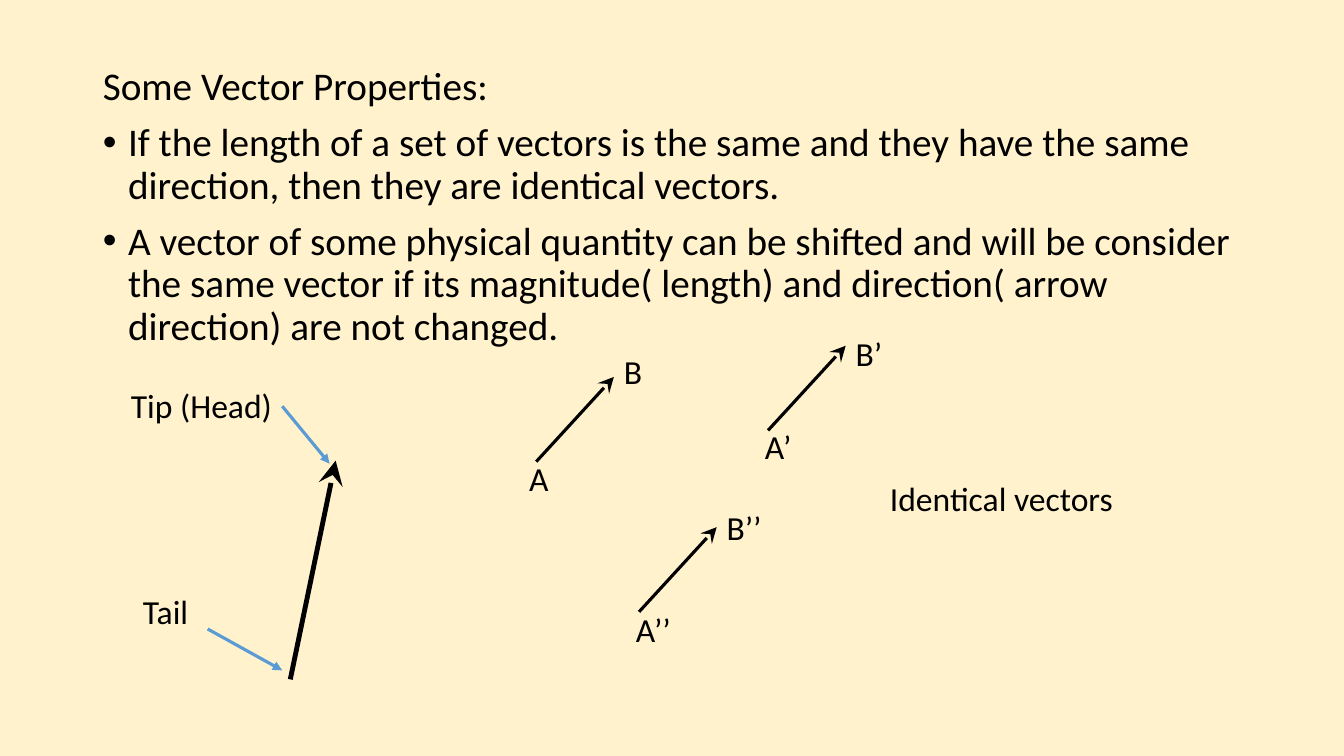
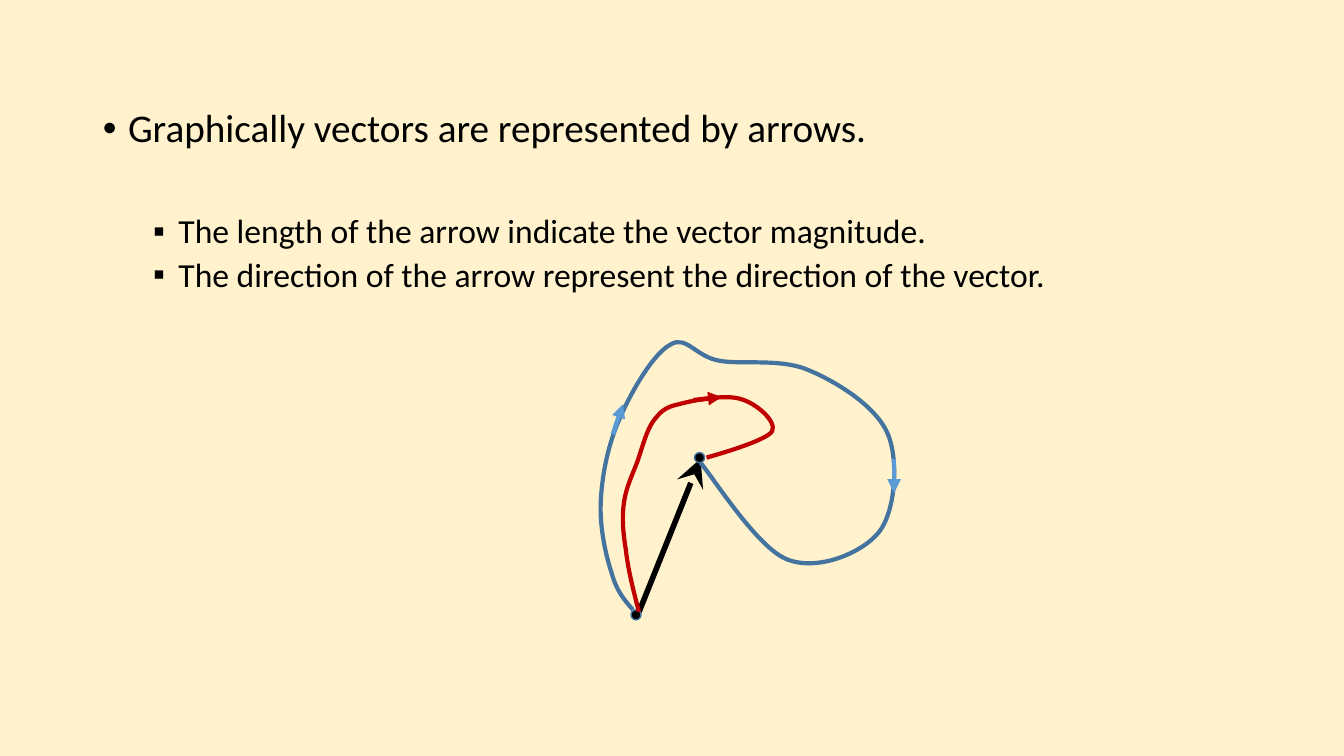
import pptx
import pptx.util
import pptx.dml.color
import pptx.enum.shapes
import pptx.enum.text
import pptx.oxml.ns
import lxml.etree

Inches = pptx.util.Inches
Pt = pptx.util.Pt
RGBColor = pptx.dml.color.RGBColor
qn = pptx.oxml.ns.qn

CREAM = RGBColor(0xFF, 0xF2, 0xCC)
BLACK = RGBColor(0x00, 0x00, 0x00)
SKY = RGBColor(0x5B, 0x9B, 0xD5)
STEEL = RGBColor(0x43, 0x73, 0x9E)
RED = RGBColor(0xC0, 0x00, 0x00)

BODY_FONT = {"name": "Calibri", "size": Pt(28)}
SMALL_FONT = {"name": "Calibri", "size": Pt(24)}
FRAME = {"word_wrap": True, "auto_size": pptx.enum.text.MSO_AUTO_SIZE.NONE,
         "vertical_anchor": pptx.enum.text.MSO_ANCHOR.TOP}

# Arrowheads: vectors have a large one, pointers a medium one
VECTOR_HEAD = {"type": "stealth", "w": "lg", "len": "lg"}
POINTER_HEAD = {"type": "triangle", "w": "med", "len": "med"}

# Paragraph styles: level, bullet, left margin, hanging indent, space before, font
STYLES = {
    "plain": (0, None, 0, 0, 10, BODY_FONT),
    "bullet": (0, "•", 0.25, -0.25, 10, BODY_FONT),
    "first square": (1, "▪", 0.75, -0.25, 45.5, SMALL_FONT),
    "square": (1, "▪", 0.75, -0.25, 5, SMALL_FONT),
}


def add_arrow(page, start, end, color, width, head):
    ends = [Inches(value) for value in (*start, *end)]
    arrow = page.shapes.add_connector(pptx.enum.shapes.MSO_CONNECTOR.STRAIGHT, *ends)
    arrow.line.color.rgb = color
    arrow.line.width = Pt(width)
    lxml.etree.SubElement(arrow.get_or_add_ln(), qn("a:tailEnd"), head)
    lxml.etree.SubElement(arrow.element.spPr, qn("a:effectLst"))


def add_curve(page, points, color):
    """Draw joined cubic curves: a start point, then three points per curve."""
    track = [(Inches(x), Inches(y)) for x, y in points]
    builder = page.shapes.build_freeform(*track[0])
    builder.add_line_segments(track[1:], close=False)
    curve = builder.convert_to_shape()
    curve.shadow.inherit = False
    curve.fill.background()
    curve.line.color.rgb = color
    curve.line.width = Pt(3)
    # Join every three straight segments into one cubic curve
    segments = list(curve.element.iter(qn("a:lnTo")))
    for first in range(0, len(segments), 3):
        lead, *others = segments[first:first + 3]
        cubic = lxml.etree.Element(qn("a:cubicBezTo"))
        lead.addprevious(cubic)
        for segment in (lead, *others):
            cubic.append(segment[0])
            segment.getparent().remove(segment)


deck = pptx.Presentation()
deck.slide_width = Inches(40 / 3)
deck.slide_height = Inches(7.5)
background = deck.slide_master.background.fill
background.solid()
background.fore_color.rgb = CREAM

# Both pages: body text
bodies = [
    (0.61, 6.47, [
        ("plain", "Some Vector Properties:"),
        ("bullet", "If the length of a set of vectors is the same and they have the same "
                   "direction, then they are identical vectors."),
        ("bullet", "A vector of some physical quantity can be shifted and will be consider "
                   "the same vector if its magnitude( length) and direction( arrow "
                   "direction) are not changed."),
    ]),
    (1.03, 5.73, [
        ("bullet", "Graphically vectors are represented by arrows."),
        ("first square", "The length of the arrow indicate the vector magnitude."),
        ("square", "The direction of the arrow represent the direction of the vector."),
    ]),
]
for top, height, lines in bodies:
    page = deck.slides.add_slide(deck.slide_layouts[1])
    title = page.shapes.title.element
    title.getparent().remove(title)
    body = page.placeholders[1]
    body.left, body.top = Inches(0.92), Inches(top)
    body.width, body.height = Inches(11.5), Inches(height)
    frame = body.text_frame
    for key, value in FRAME.items():
        setattr(frame, key, value)
    for number, (style, text) in enumerate(lines):
        level, bullet, margin, indent, before, font = STYLES[style]
        para = frame.paragraphs[0] if number == 0 else frame.add_paragraph()
        para.level = level
        para.line_spacing = 0.9
        para.space_before = Pt(before)
        span = para.add_run()
        span.text = text
        for key, value in font.items():
            setattr(span.font, key, value)
        span.font.color.rgb = BLACK
        properties = para._p.get_or_add_pPr()
        properties.set("marL", str(Inches(margin)))
        properties.set("indent", str(Inches(indent)))
        if bullet:
            lxml.etree.SubElement(properties, qn("a:buFont"), typeface="Arial")
            lxml.etree.SubElement(properties, qn("a:buChar"), char=bullet)
        else:
            lxml.etree.SubElement(properties, qn("a:buNone"))

properties_page, paths_page = deck.slides

# Page 1: identical vectors, all with the same length and direction
for x, y in [(5.32, 4.58), (7.62, 4.27), (6.34, 6.07)]:
    add_arrow(properties_page, (x, y), (x + 0.77, y - 0.84), BLACK, 2.25, VECTOR_HEAD)

# Page 1: one vector with pointers to its head and tail
add_arrow(properties_page, (2.88, 6.74), (3.33, 4.57), BLACK, 3.5, VECTOR_HEAD)
add_arrow(properties_page, (2.8, 4.03), (3.27, 4.6), SKY, 2.25, POINTER_HEAD)
add_arrow(properties_page, (2.06, 6.24), (2.8, 6.65), SKY, 2.25, POINTER_HEAD)

# Page 1: labels
labels = [
    ("A", 5.15, 4.49, 0.35), ("B", 6.09, 3.43, 0.35),
    ("A’", 7.49, 4.18, 0.78), ("B’", 8.39, 3.25, 0.61),
    ("A’’", 6.21, 5.99, 0.78), ("B’’", 7.11, 4.98, 0.61),
    ("Tip (Head)", 1.2, 3.77, 1.79), ("Tail", 1.32, 5.81, 0.78),
    ("Identical vectors", 8.73, 4.69, 2.85),
]
for text, left, top, width in labels:
    box = properties_page.shapes.add_textbox(
        Inches(left), Inches(top), Inches(width), Inches(0.5))
    for key, value in FRAME.items():
        setattr(box.text_frame, key, value)
    span = box.text_frame.paragraphs[0].add_run()
    span.text = text
    for key, value in SMALL_FONT.items():
        setattr(span.font, key, value)
    span.font.color.rgb = BLACK

# Page 2: straight vector and the long way round
add_arrow(paths_page, (6.34, 6.07), (6.95, 4.55), BLACK, 4, VECTOR_HEAD)
long_path = [
    (6.28, 6.05),
    (6.2, 5.96), (6.12, 5.87), (6.07, 5.69),
    (6.01, 5.51), (5.95, 5.24), (5.96, 4.99),
    (5.97, 4.73), (6.03, 4.41), (6.15, 4.15),
    (6.26, 3.89), (6.48, 3.51), (6.65, 3.42),
    (6.81, 3.32), (6.9, 3.54), (7.14, 3.58),
    (7.37, 3.62), (7.76, 3.55), (8.04, 3.68),
    (8.32, 3.8), (8.7, 4.04), (8.81, 4.31),
    (8.92, 4.58), (8.88, 5.08), (8.72, 5.28),
    (8.55, 5.49), (8.11, 5.67), (7.81, 5.55),
    (7.52, 5.44), (7.09, 4.76), (6.95, 4.59),
]
add_curve(paths_page, long_path, STEEL)
add_arrow(paths_page, (6.08, 4.31), (6.18, 4.01), SKY, 3.25, POINTER_HEAD)
add_arrow(paths_page, (8.87, 4.55), (8.87, 4.89), SKY, 3.25, POINTER_HEAD)

# Page 2: start and end points
for left, top in [(6.26, 6.05), (6.89, 4.49)]:
    dot = paths_page.shapes.add_shape(pptx.enum.shapes.MSO_SHAPE.OVAL, Inches(left),
                                      Inches(top), Inches(0.1), Inches(0.1))
    dot.shadow.inherit = False
    dot.fill.solid()
    dot.fill.fore_color.rgb = BLACK
    dot.line.color.rgb = STEEL
    dot.line.width = Pt(1)

# Page 2: the short way round
short_path = [
    (6.34, 6.07),
    (6.28, 5.85), (6.23, 5.64), (6.21, 5.46),
    (6.18, 5.28), (6.17, 5.13), (6.19, 4.99),
    (6.21, 4.84), (6.27, 4.72), (6.32, 4.59),
    (6.37, 4.45), (6.41, 4.28), (6.48, 4.18),
    (6.55, 4.09), (6.59, 4.04), (6.74, 4.01),
    (6.88, 3.97), (7.2, 3.91), (7.35, 3.96),
    (7.5, 4), (7.71, 4.18), (7.66, 4.28),
    (7.6, 4.38), (7.01, 4.54), (7.01, 4.54),
]
add_curve(paths_page, short_path, RED)
add_arrow(paths_page, (6.88, 3.97), (7.16, 3.94), RED, 3.25, POINTER_HEAD)

deck.save("out.pptx")
